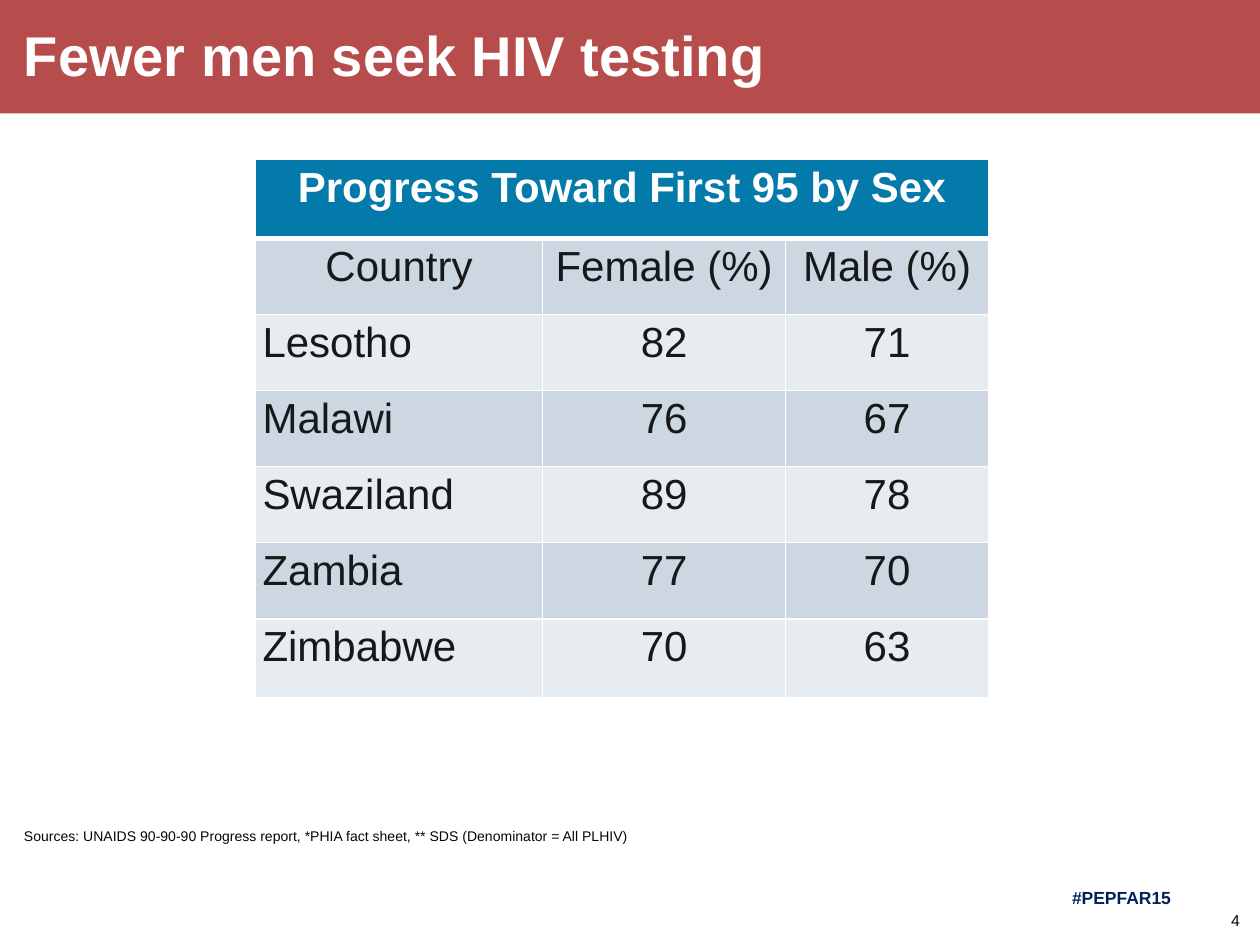
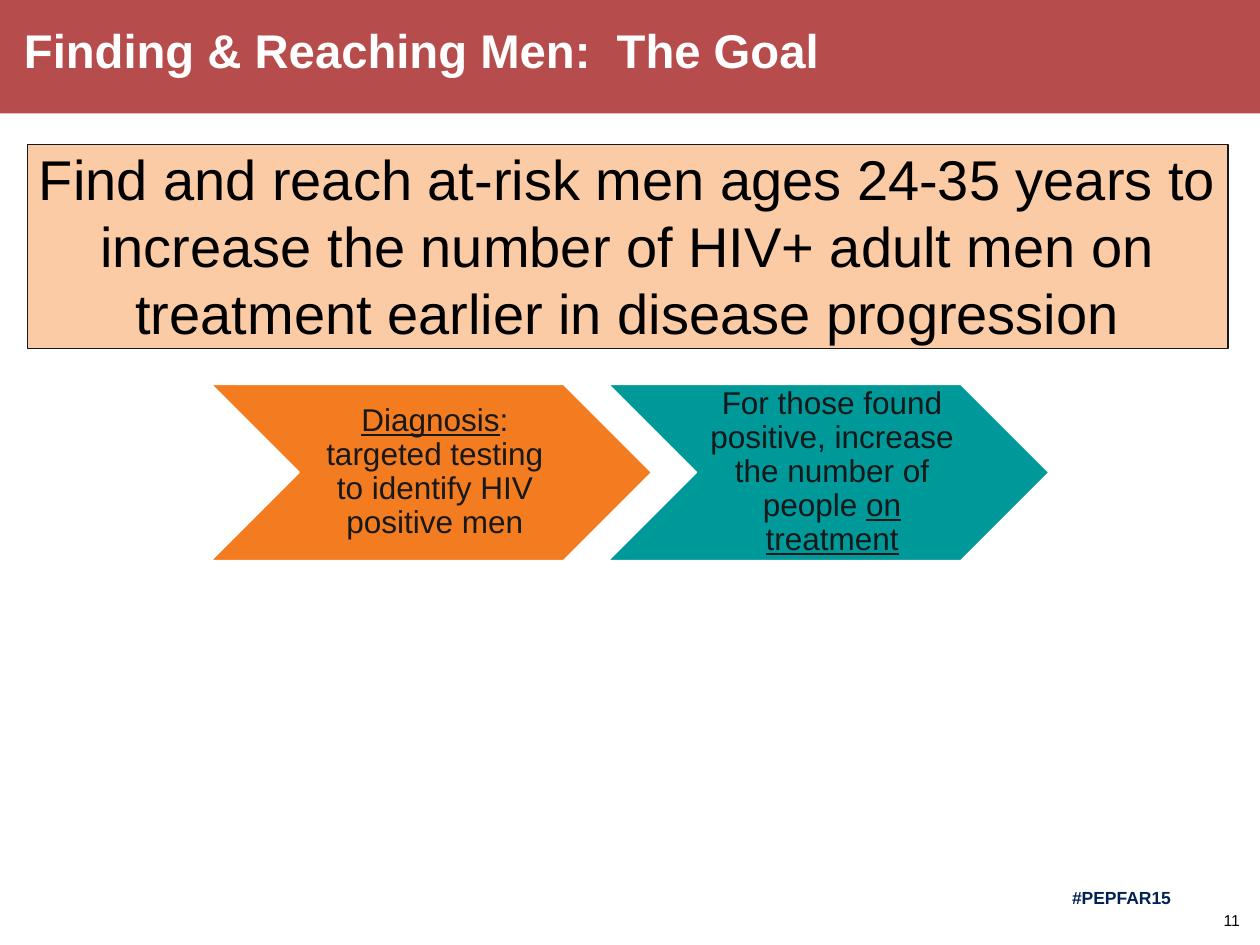
from dataclasses import dataclass

from lxml.etree import SubElement
from pptx import Presentation
from pptx.dml.color import RGBColor as Rgb
from pptx.enum.shapes import MSO_SHAPE as Shape
from pptx.enum.text import MSO_ANCHOR as Anchor, MSO_AUTO_SIZE as AutoSize, PP_ALIGN as Align
from pptx.oxml import parse_xml
from pptx.oxml.ns import nsdecls, qn
from pptx.util import Pt


@dataclass(frozen=True)
class Theme:
    font: str = "Arial"
    # Colours
    band: str = "B64C4B"
    white: str = "FFFFFF"
    black: str = "000000"
    ink: str = "16181A"
    small_ink: str = "060606"
    navy: str = "002156"
    header: str = "047AAA"
    row_dark: str = "CCD7E2"
    row_light: str = "E7ECF1"
    peach: str = "FBCBA6"
    orange: str = "F47C20"
    teal: str = "009999"
    # Type sizes
    title: int = 32
    long_title: int = 27
    statement: int = 32
    cell: int = 24
    step: int = 18
    hashtag: int = 10
    number: int = 9
    source: int = 8


THEME = Theme()
PAGE_WIDTH, PAGE_HEIGHT = 720, 540
TITLE_ONLY, TITLE_AND_CONTENT = 5, 1


# Shared formatting
def place(shape, left, top, width, height):
    shape.left, shape.top, shape.width, shape.height = map(Pt, (left, top, width, height))


def paint(shape, fill, line=None, weight=1):
    shape.fill.solid()
    shape.fill.fore_color.rgb = Rgb.from_string(fill)
    if line:
        shape.line.color.rgb = Rgb.from_string(line)
        shape.line.width = Pt(weight)
    else:
        shape.line.fill.background()


def set_frame(frame, margins=(0, 0, 0, 0), anchor=Anchor.TOP, wrap=True):
    frame.margin_left, frame.margin_top, frame.margin_right, frame.margin_bottom = map(Pt, margins)
    frame.vertical_anchor = anchor
    frame.word_wrap = wrap
    frame.auto_size = AutoSize.NONE


def style_para(para, size, color, bold=False, align=Align.LEFT, spacing=1.0):
    para.alignment = align
    para.line_spacing = spacing
    para.space_before = para.space_after = Pt(0)
    for span in para.runs:
        span.font.name = THEME.font
        span.font.size = Pt(size)
        span.font.bold = bold
        span.font.color.rgb = Rgb.from_string(color)


def add_label(page, text, position, size, color, margins=(7.2, 3.6, 7.2, 3.6),
              anchor=Anchor.TOP, wrap=True, **style):
    box = page.shapes.add_textbox(*map(Pt, position))
    set_frame(box.text_frame, margins, anchor, wrap)
    box.text_frame.text = text
    style_para(box.text_frame.paragraphs[0], size, color, **style)


# Page with title band, hashtag and number
def add_page(deck, layout, title, title_size, number):
    page = deck.slides.add_slide(deck.slide_layouts[layout])
    band = page.shapes.add_shape(Shape.RECTANGLE, 0, 0, Pt(PAGE_WIDTH), Pt(64.8))
    band.shadow.inherit = False
    paint(band, THEME.band)
    heading = page.shapes.title
    heading._element.addprevious(band._element)

    place(heading, 13.7, 15.8, 690.5, 36)
    set_frame(heading.text_frame)
    heading.text_frame.text = title
    style_para(heading.text_frame.paragraphs[0], title_size, THEME.white, bold=True, spacing=0.9)

    add_label(page, "#PEPFAR15", (605.5, 503.3, 71.3, 19.4), THEME.hashtag, THEME.navy,
              wrap=False, bold=True)
    add_label(page, str(number), (681, 511.2, 34.6, 28.8), THEME.number, THEME.small_ink,
              anchor=Anchor.MIDDLE, align=Align.RIGHT)
    return page


# Table
def set_borders(cell, top=1, bottom=1):
    properties = cell._tc.get_or_add_tcPr()
    edges = (("lnL", 1), ("lnR", 1), ("lnT", top), ("lnB", bottom))
    for position, (edge, weight) in enumerate(edges):
        properties.insert(position, parse_xml(
            f'<a:{edge} {nsdecls("a")} w="{Pt(weight)}"><a:solidFill>'
            f'<a:srgbClr val="{THEME.white}"/></a:solidFill></a:{edge}>'))


def fill_cell(cell, text, fill, color, bold, align):
    cell.fill.solid()
    cell.fill.fore_color.rgb = Rgb.from_string(fill)
    cell.margin_left = cell.margin_right = Pt(4)
    cell.margin_top = cell.margin_bottom = Pt(3)
    if text:
        cell.text = text
        style_para(cell.text_frame.paragraphs[0], THEME.cell, color, bold, align)


def add_progress_table(page, caption, rows, position, widths, heights):
    left, top = position
    table = page.shapes.add_table(len(heights), len(widths), Pt(left), Pt(top),
                                  Pt(sum(widths)), Pt(sum(heights))).table
    for column, width in zip(table.columns, widths):
        column.width = Pt(width)
    for row, height in zip(table.rows, heights):
        row.height = Pt(height)

    table.cell(0, 0).merge(table.cell(0, len(widths) - 1))
    for index in range(len(widths)):
        cell = table.cell(0, index)
        fill_cell(cell, caption if index == 0 else "", THEME.header, THEME.white,
                  True, Align.CENTER)
        set_borders(cell, bottom=3)

    for row_index, values in enumerate(rows, start=1):
        fill = THEME.row_dark if row_index % 2 else THEME.row_light
        for index, value in enumerate(values):
            is_country = index == 0 and row_index > 1
            cell = table.cell(row_index, index)
            fill_cell(cell, value, fill, THEME.ink, False,
                      Align.LEFT if is_country else Align.CENTER)
            set_borders(cell, top=3 if row_index == 1 else 1)


# Goal statement and process steps
def fill_statement(page, text):
    box = page.placeholders[1]
    place(box, 15.8, 82.6, 686, 116.6)
    paint(box, THEME.peach, THEME.ink, 0.75)
    set_frame(box.text_frame)
    box.text_frame.text = text
    para = box.text_frame.paragraphs[0]
    properties = para._p.get_or_add_pPr()
    properties.set("marL", "0")
    properties.set("indent", "0")
    SubElement(properties, qn("a:buNone"))
    style_para(para, THEME.statement, THEME.black, align=Align.CENTER)


def add_chevron(page, position, fill, spans):
    chevron = page.shapes.add_shape(Shape.CHEVRON, *map(Pt, position))
    chevron.shadow.inherit = False
    paint(chevron, fill, THEME.white)
    set_frame(chevron.text_frame, (6, 2, 2, 2), Anchor.MIDDLE)
    para = chevron.text_frame.paragraphs[0]
    for text, underlined in spans:
        span = para.add_run()
        span.text = text
        span.font.underline = underlined
    style_para(para, THEME.step, THEME.ink, align=Align.CENTER, spacing=0.9)


def build_testing_page(deck):
    page = add_page(deck, TITLE_ONLY, "Fewer men seek HIV testing", THEME.title, 4)
    add_label(page, "Sources: UNAIDS 90-90-90 Progress report, *PHIA fact sheet, "
              "** SDS (Denominator = All PLHIV)", (13.7, 473.8, 456.5, 12.2),
              THEME.source, THEME.small_ink, margins=(0, 0, 0, 0), spacing=0.9)
    rows = [
        ("Country", "Female (%)", "Male (%)"),
        ("Lesotho", "82", "71"),
        ("Malawi", "76", "67"),
        ("Swaziland", "89", "78"),
        ("Zambia", "77", "70"),
        ("Zimbabwe", "70", "63"),
    ]
    add_progress_table(page, "Progress Toward First 95 by Sex", rows, (146, 91),
                       widths=(164, 139, 115.8),
                       heights=(45.2, 43.5, 43.5, 43.5, 43.5, 43.5, 45.2))


def build_goal_page(deck):
    page = add_page(deck, TITLE_AND_CONTENT, "Finding & Reaching Men:  The Goal",
                    THEME.long_title, 11)
    fill_statement(page, "Find and reach at-risk men ages 24-35 years to increase the number "
                   "of HIV+ adult men on treatment earlier in disease progression")
    steps = [
        (THEME.orange, [("Diagnosis", True),
                        (": targeted testing to identify HIV positive men", False)]),
        (THEME.teal, [("For those found positive, increase the number of people ", False),
                      ("on treatment", True)]),
    ]
    for index, (fill, spans) in enumerate(steps):
        add_chevron(page, (120.5 + index * 227, 219.6, 252, 100.8), fill, spans)


def main():
    deck = Presentation()
    deck.slide_width, deck.slide_height = Pt(PAGE_WIDTH), Pt(PAGE_HEIGHT)
    build_testing_page(deck)
    build_goal_page(deck)
    deck.save("out.pptx")


if __name__ == "__main__":
    main()
